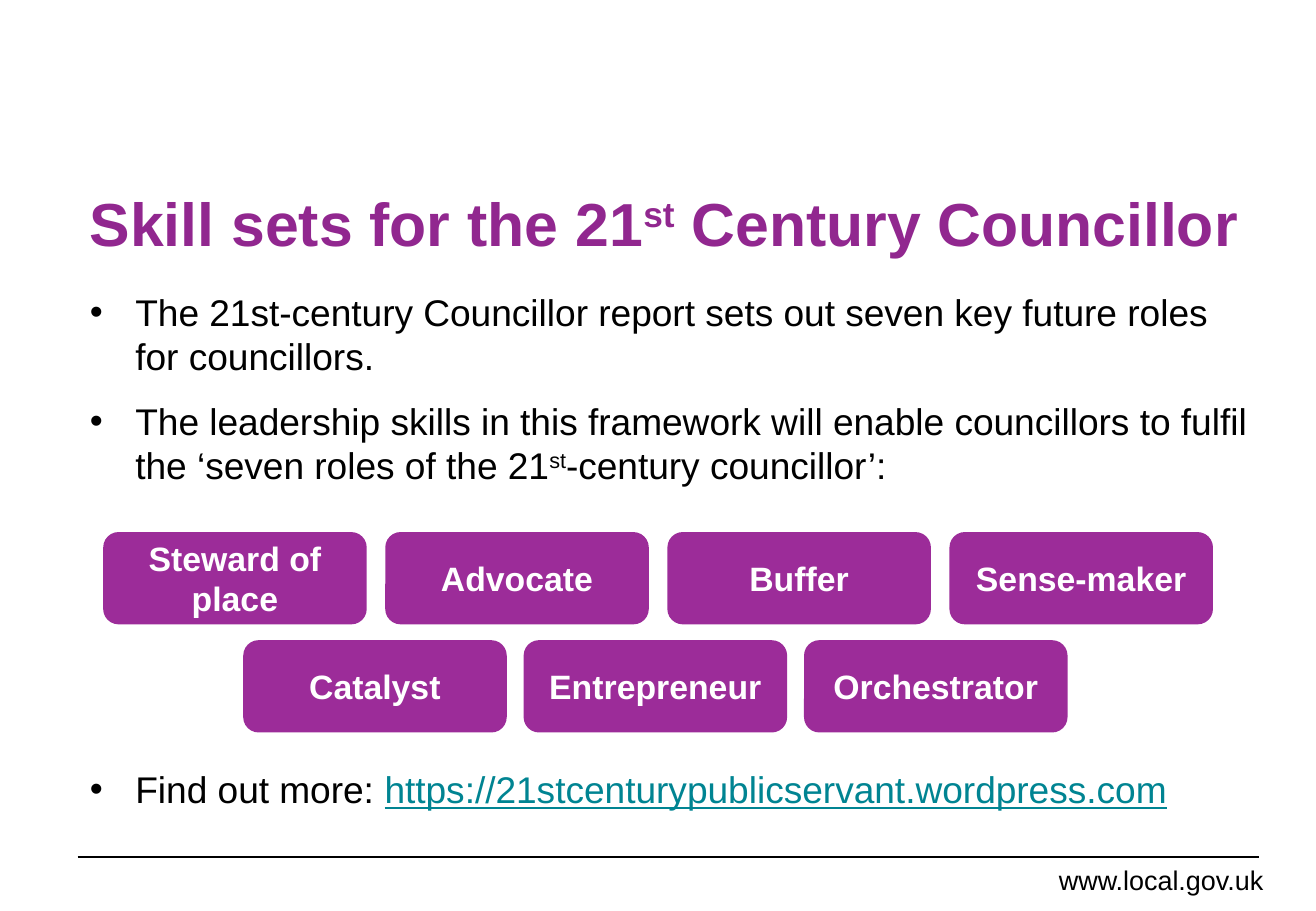
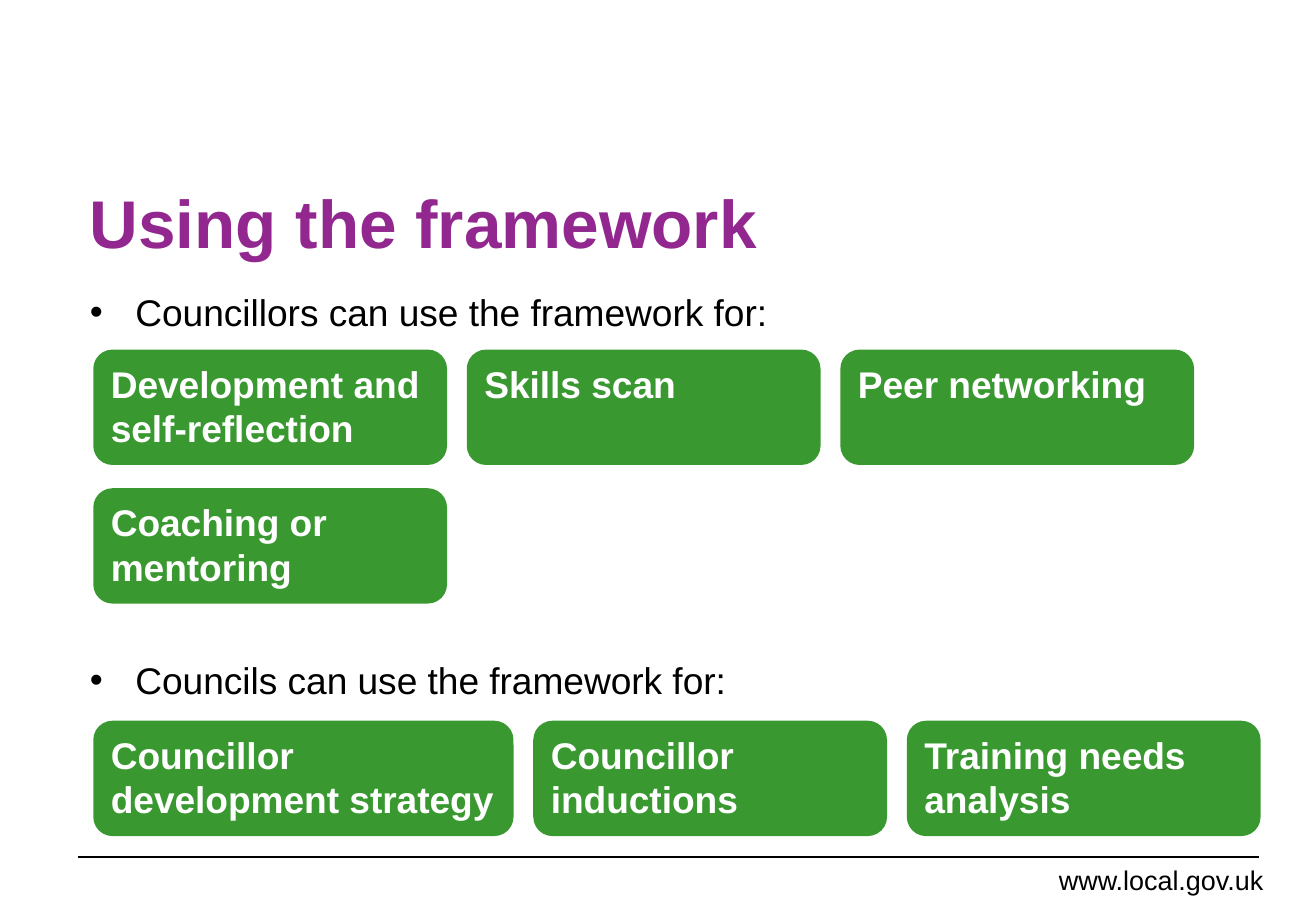
from dataclasses import dataclass
from typing import NamedTuple

from lxml import etree
from pptx import Presentation
from pptx.dml.color import RGBColor
from pptx.enum import shapes, text
from pptx.oxml.ns import qn
from pptx.slide import Slide
from pptx.util import Pt

# Shared look
FONT = "Arial"
TITLE_PURPLE = RGBColor(0x91, 0x27, 0x8F)
ROLE_PURPLE = RGBColor(0x9C, 0x2C, 0x99)
USE_GREEN = RGBColor(0x39, 0x99, 0x30)
LINK_TEAL = RGBColor(0x00, 0x84, 0x92)
BLACK = RGBColor(0, 0, 0)
WHITE = RGBColor(0xFF, 0xFF, 0xFF)

LEFT = 46
BODY_SIZE = 22
HANGING = 27


class Run(NamedTuple):
    text: str
    superscript: bool = False
    link: bool = False


class Bullet(NamedTuple):
    runs: list[Run]
    space_before: float = 0


@dataclass
class TileStyle:
    fill: RGBColor
    size: float
    height: float
    align: text.PP_ALIGN
    anchor: text.MSO_ANCHOR


@dataclass
class TileRow:
    left: float
    top: float
    gap: float
    tiles: list[tuple[str, float]]  # label, width


ROLE = TileStyle(ROLE_PURPLE, 20, 54.7, text.PP_ALIGN.CENTER, text.MSO_ANCHOR.MIDDLE)
USE = TileStyle(USE_GREEN, 22, 68.4, text.PP_ALIGN.LEFT, text.MSO_ANCHOR.TOP)
ROLE_WIDTH = 156.2
USE_WIDTH = 209.7
WIDE_USE_WIDTH = 249.1

ROLE_ROWS = [
    TileRow(61.2, 315.4, 11, [(name, ROLE_WIDTH) for name in
                              ("Steward of place", "Advocate", "Buffer", "Sense-maker")]),
    TileRow(144.2, 379.5, 10, [(name, ROLE_WIDTH) for name in
                               ("Catalyst", "Entrepreneur", "Orchestrator")]),
]
USE_ROWS = [
    TileRow(55.3, 207.2, 11.7, [(name, USE_WIDTH) for name in
                                ("Development and self-reflection", "Skills scan",
                                 "Peer networking")]),
    TileRow(55.3, 289.4, 11.7, [("Coaching or mentoring", USE_WIDTH)]),
    TileRow(55.3, 427.2, 11.7, [("Councillor development strategy", WIDE_USE_WIDTH),
                                ("Councillor inductions", USE_WIDTH),
                                ("Training needs analysis", USE_WIDTH)]),
]


def add_run(p, run: Run, size: float, color: RGBColor, bold: bool = False) -> None:
    r = p.add_run()
    r.text = run.text
    r.font.name, r.font.size, r.font.bold = FONT, Pt(size), bold
    r.font.color.rgb = LINK_TEAL if run.link else color
    if run.link:
        r.font.underline = True
    if run.superscript:
        r._r.get_or_add_rPr().set("baseline", "30000")


def place(sp, left: float, top: float, width: float, height: float) -> None:
    sp.left, sp.top, sp.width, sp.height = Pt(left), Pt(top), Pt(width), Pt(height)


def add_footer(s: Slide) -> None:
    rule = s.shapes.add_connector(shapes.MSO_CONNECTOR.STRAIGHT,
                                  Pt(LEFT), Pt(508), Pt(746), Pt(508))
    rule.line.color.rgb = BLACK
    rule.line.width = Pt(0.75)
    etree.SubElement(rule._element.spPr, qn("a:effectLst"))

    sp = s.shapes.add_textbox(Pt(617), Pt(508.5), Pt(139), Pt(27))
    sp.text_frame.word_wrap = False
    p = sp.text_frame.paragraphs[0]
    p.alignment = text.PP_ALIGN.RIGHT
    add_run(p, Run("www.local.gov.uk"), 16, BLACK)


def set_title(s: Slide, runs: list[Run], size: float) -> None:
    sp = s.shapes.title
    place(sp, LEFT, 108.75, 702, 45.5)
    tf = sp.text_frame
    tf.auto_size = text.MSO_AUTO_SIZE.NONE
    tf.vertical_anchor = text.MSO_ANCHOR.MIDDLE
    p = tf.paragraphs[0]
    p.alignment = text.PP_ALIGN.LEFT
    for run in runs:
        add_run(p, run, size, TITLE_PURPLE, bold=True)


def set_bullets(s: Slide, bullets: list[Bullet]) -> None:
    sp = s.placeholders[1]
    place(sp, LEFT, 167.75, 702, 329)
    tf = sp.text_frame
    tf.auto_size = text.MSO_AUTO_SIZE.NONE
    for i, bullet in enumerate(bullets):
        p = tf.add_paragraph() if i else tf.paragraphs[0]
        pPr = p._p.get_or_add_pPr()
        pPr.set("marL", str(Pt(HANGING)))
        pPr.set("indent", str(-Pt(HANGING)))
        p.space_before, p.space_after = Pt(bullet.space_before), Pt(12)
        for run in bullet.runs:
            add_run(p, run, BODY_SIZE, BLACK)


def add_tiles(s: Slide, rows: list[TileRow], style: TileStyle) -> None:
    for row in rows:
        left = row.left
        for label, width in row.tiles:
            sp = s.shapes.add_shape(shapes.MSO_SHAPE.ROUNDED_RECTANGLE,
                                    Pt(left), Pt(row.top), Pt(width), Pt(style.height))
            sp.shadow.inherit = False
            sp.fill.solid()
            sp.fill.fore_color.rgb = style.fill
            sp.line.fill.background()
            tf = sp.text_frame
            tf.word_wrap = True
            tf.vertical_anchor = style.anchor
            p = tf.paragraphs[0]
            p.alignment = style.align
            add_run(p, Run(label), style.size, WHITE, bold=True)
            left += width + row.gap


def add_slide(prs, title: list[Run], title_size: float, bullets: list[Bullet],
              rows: list[TileRow], style: TileStyle) -> None:
    s = prs.slides.add_slide(prs.slide_layouts[1])
    add_footer(s)
    set_title(s, title, title_size)
    set_bullets(s, bullets)
    add_tiles(s, rows, style)


def main() -> None:
    prs = Presentation()
    prs.slide_width, prs.slide_height = Pt(780), Pt(540)

    # Seven roles
    add_slide(
        prs,
        [Run("Skill sets for the 21"), Run("st", superscript=True), Run(" Century Councillor")],
        36,
        [
            Bullet([Run("The 21st-century Councillor report sets out seven key future roles "
                        "for councillors.")]),
            Bullet([Run("The leadership skills in this framework will enable councillors to "
                        "fulfil the ‘seven roles of the 21"),
                    Run("st", superscript=True), Run("-century councillor’:")]),
            Bullet([Run("Find out more: "),
                    Run("https://21stcenturypublicservant.wordpress.com", link=True)], 153.6),
        ],
        ROLE_ROWS, ROLE)

    # Uses of the framework
    add_slide(
        prs,
        [Run("Using the framework")],
        40,
        [
            Bullet([Run("Councillors can use the framework for:")]),
            Bullet([Run("Councils can use the framework for:")], 180),
        ],
        USE_ROWS, USE)

    prs.save("out.pptx")


if __name__ == "__main__":
    main()
